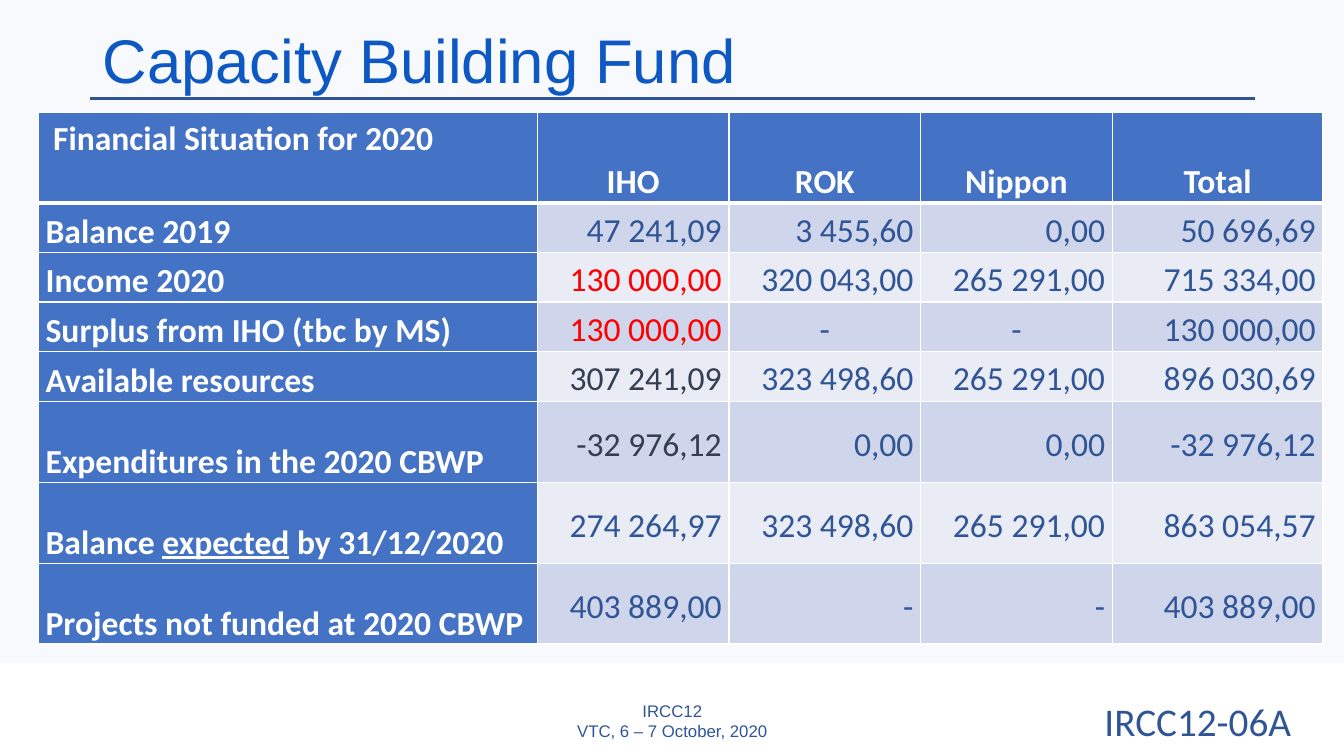
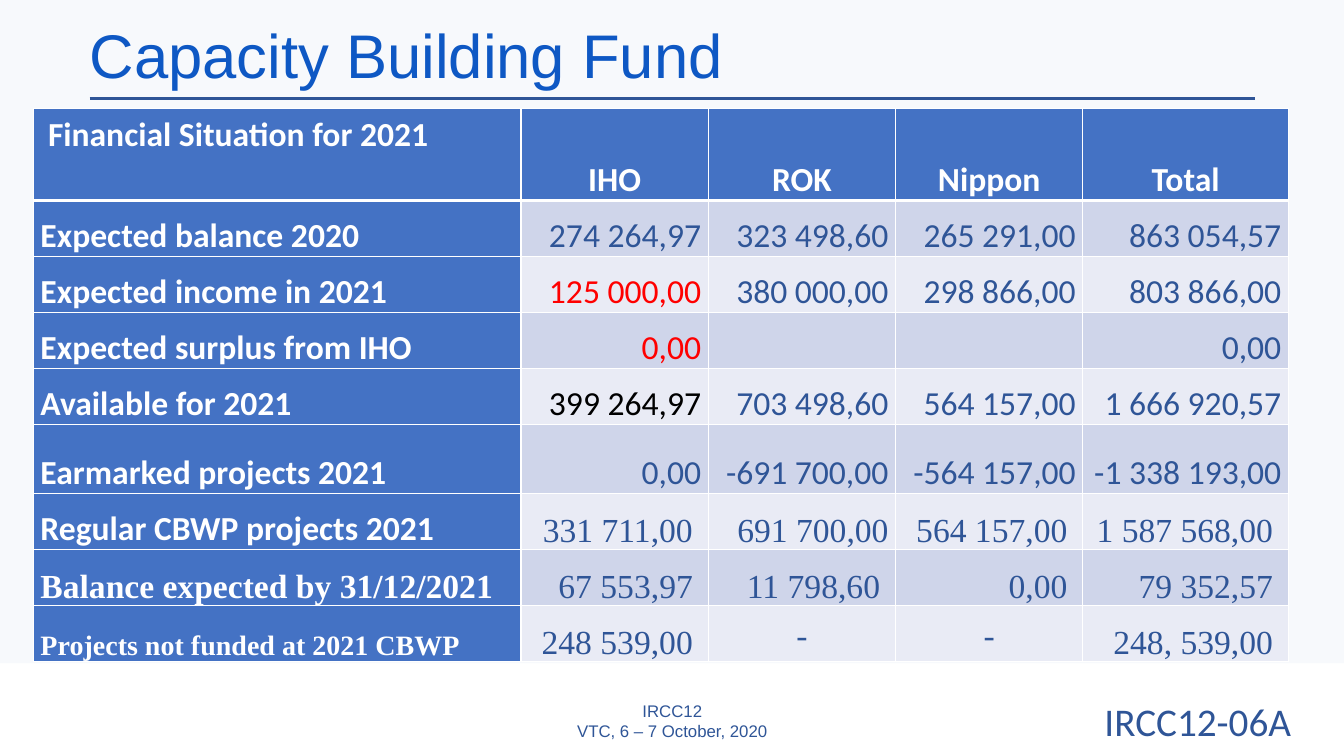
from lxml.etree import SubElement
from pptx import Presentation
from pptx.dml.color import RGBColor
from pptx.enum.shapes import MSO_CONNECTOR, MSO_SHAPE
from pptx.enum.text import MSO_ANCHOR, PP_ALIGN
from pptx.oxml.ns import qn
from pptx.util import Cm, Pt

WHITE = RGBColor(0xFF, 0xFF, 0xFF)
BLACK = RGBColor(0x00, 0x00, 0x00)
RED = RGBColor(0xFF, 0x00, 0x00)
SLATE = RGBColor(0x33, 0x3F, 0x50)
NAVY = RGBColor(0x2F, 0x55, 0x97)
TITLE_BLUE = RGBColor(0x0E, 0x58, 0xC4)
PALE_BLUE = RGBColor(0xDA, 0xE3, 0xF3)
HEAD_BLUE = RGBColor(0x44, 0x72, 0xC4)
BANDS = [RGBColor(0xE9, 0xEB, 0xF5), RGBColor(0xCF, 0xD5, 0xEA)]

SANS, SERIF = "Calibri", "Times New Roman"
LEFT, CENTER, RIGHT = PP_ALIGN.LEFT, PP_ALIGN.CENTER, PP_ALIGN.RIGHT
TOP, MIDDLE, BOTTOM = MSO_ANCHOR.TOP, MSO_ANCHOR.MIDDLE, MSO_ANCHOR.BOTTOM
HEADS = ["IHO", "ROK", "Nippon", "Total"]

SLIDES = [
    {
        "title_at": (2.34, -0.25),
        "table_at": (0.97, 2.84),
        "cols": [12.57, 4.83, 4.83, 4.83, 5.31],
        "head": (2.27, " Financial Situation for 2020"),
        "anchor": MIDDLE,
        "rows": [
            (1.25, "Balance 2019", SANS, SANS, NAVY, RIGHT,
             ["47 241,09", "3 455,60", "0,00", "50 696,69"]),
            (1.25, "Income 2020", SANS, SANS, RED, RIGHT,
             ["130 000,00", "320 043,00", "265 291,00", "715 334,00"]),
            (1.25, "Surplus from IHO (tbc by MS)", SANS, SANS, RED, CENTER,
             ["130 000,00", "-", "-", "130 000,00"]),
            (1.25, "Available resources", SANS, SANS, SLATE, RIGHT,
             ["307 241,09", "323 498,60", "265 291,00", "896 030,69"]),
            (2.04, "Expenditures in the 2020 CBWP", SANS, SANS, SLATE, RIGHT,
             ["-32 976,12", "0,00", "0,00", "-32 976,12"]),
            (2.04, "Balance _expected_ by 31/12/2020", SANS, SANS, NAVY, RIGHT,
             ["274 264,97", "323 498,60", "265 291,00", "863 054,57"]),
            (2.04, "Projects not funded at 2020 CBWP", SANS, SANS, NAVY, RIGHT,
             ["403 889,00", "-", "-", "403 889,00"]),
        ],
    },
    {
        "title_at": (2.01, -0.36),
        "table_at": (0.84, 2.74),
        "cols": [12.29, 4.72, 4.72, 4.72, 5.18],
        "head": (2.31, " Financial Situation for 2021"),
        "anchor": BOTTOM,
        "rows": [
            (1.41, "Expected balance 2020", SANS, SANS, NAVY, RIGHT,
             ["274 264,97", "323 498,60", "265 291,00", "863 054,57"]),
            (1.41, "Expected income in 2021", SANS, SANS, RED, RIGHT,
             ["125 000,00", "380 000,00", "298 866,00", "803 866,00"]),
            (1.41, "Expected surplus from IHO", SANS, SANS, RED, RIGHT,
             ["0,00", "", "", "0,00"]),
            (1.41, "Available for 2021", SANS, SANS, BLACK, RIGHT,
             ["399 264,97", "703 498,60", "564 157,00", "1 666 920,57"]),
            (1.75, "Earmarked projects 2021", SANS, SANS, NAVY, RIGHT,
             ["0,00", "-691 700,00", "-564 157,00", "-1 338 193,00"]),
            (1.41, "Regular CBWP projects 2021", SANS, SERIF, NAVY, RIGHT,
             ["331 711,00 ", "691 700,00", "564 157,00 ", "1 587 568,00 "]),
            (1.41, "Balance expected by 31/12/2021", SERIF, SERIF, NAVY, RIGHT,
             ["67 553,97 ", "11 798,60 ", "0,00 ", "79 352,57 "]),
            (1.41, "Projects not funded at 2021 CBWP", SERIF, SERIF, NAVY, CENTER,
             ["248 539,00 ", "-", "-", "248, 539,00 "]),
        ],
    },
]


def write(tf, text, name, size, color, align, spacing=1.0, bold=False):
    p = tf.paragraphs[0]
    p.alignment = align
    p.line_spacing = spacing
    p.font.name = name
    p.font.size = Pt(size)
    p.font.bold = bold
    p.font.color.rgb = color
    if "_" not in text:
        p.text = text
        return
    for i, part in enumerate(text.split("_")):
        r = p.add_run()
        r.text = part
        r.font.underline = i % 2 == 1


def style_cell(cell, fill, anchor, top=1, bottom=1):
    cell.margin_left = cell.margin_right = Cm(0.18)
    cell.margin_top = cell.margin_bottom = 0
    cell.vertical_anchor = anchor
    tcPr = cell._tc.get_or_add_tcPr()
    for side, width in (("L", 1), ("R", 1), ("T", top), ("B", bottom)):
        ln = SubElement(tcPr, qn("a:ln" + side), w=str(Pt(width)))
        line_fill = SubElement(ln, qn("a:solidFill"))
        SubElement(line_fill, qn("a:srgbClr"), val=str(WHITE))
    cell.fill.solid()
    cell.fill.fore_color.rgb = fill


prs = Presentation()
prs.slide_width = Cm(33.87)
prs.slide_height = Cm(19.05)

for data in SLIDES:
    s = prs.slides.add_slide(prs.slide_layouts[6])

    band = s.shapes.add_shape(MSO_SHAPE.RECTANGLE, 0, 0, prs.slide_width, Cm(16.71))
    band.shadow.inherit = False
    band.line.fill.background()
    band.fill.solid()
    band.fill.fore_color.rgb = PALE_BLUE
    color = band._element.spPr.find(qn("a:solidFill"))[0]
    SubElement(color, qn("a:alpha"), val="21000")

    rule = s.shapes.add_connector(
        MSO_CONNECTOR.STRAIGHT, Cm(2.26), Cm(2.49), Cm(31.62), Cm(2.49))
    rule.line.color.rgb = NAVY
    rule.line.width = Pt(2.25)
    SubElement(rule._element.spPr, qn("a:effectLst"))

    x, y = data["title_at"]
    for box, text, name, size, color, align, anchor, spacing in (
        ((x, y, 29.21, 3.68), "Capacity Building Fund",
         "Arial", 44, TITLE_BLUE, LEFT, MIDDLE, 0.9),
        ((11.23, 17.65, 11.43, 1.02), "IRCC12\nVTC, 6 – 7 October, 2020",
         "Arial", 12, NAVY, CENTER, MIDDLE, 1.0),
        ((26.59, 17.45, 7.19, 1.45), "IRCC12-06A",
         SANS, 28, NAVY, CENTER, TOP, 1.0),
    ):
        sp = s.shapes.add_textbox(*map(Cm, box))
        tf = sp.text_frame
        tf.word_wrap = True
        tf.vertical_anchor = anchor
        write(tf, text, name, size, color, align, spacing)

    cols, rows = data["cols"], data["rows"]
    head_height, heading = data["head"]
    heights = [head_height] + [row[0] for row in rows]
    x, y = data["table_at"]
    table = s.shapes.add_table(
        len(heights), len(cols), Cm(x), Cm(y), Cm(sum(cols)), Cm(sum(heights))).table
    table.first_row = False
    table.horz_banding = False
    for column, width in zip(table.columns, cols):
        column.width = Cm(width)
    for table_row, height in zip(table.rows, heights):
        table_row.height = Cm(height)

    for c, text in enumerate([heading] + HEADS):
        cell = table.cell(0, c)
        style_cell(cell, HEAD_BLUE, BOTTOM if c else TOP, bottom=3)
        write(cell.text_frame, text, SANS, 24, WHITE, CENTER if c else LEFT, 1.15, True)

    for n, (_, label, label_font, font, iho_color, dash_align, values) in enumerate(rows, 1):
        top = 3 if n == 1 else 1
        cell = table.cell(n, 0)
        style_cell(cell, HEAD_BLUE, BOTTOM, top)
        size = 20 if label.endswith("2021 CBWP") else 24
        write(cell.text_frame, label, label_font, size, WHITE, LEFT, 1.15, True)
        for c, value in enumerate(values, 1):
            cell = table.cell(n, c)
            dash = value == "-"
            style_cell(cell, BANDS[n % 2], MIDDLE if dash else data["anchor"], top)
            write(cell.text_frame, value, font, 24, iho_color if c == 1 else NAVY,
                  dash_align if dash else RIGHT, 1.15)

prs.save("out.pptx")
